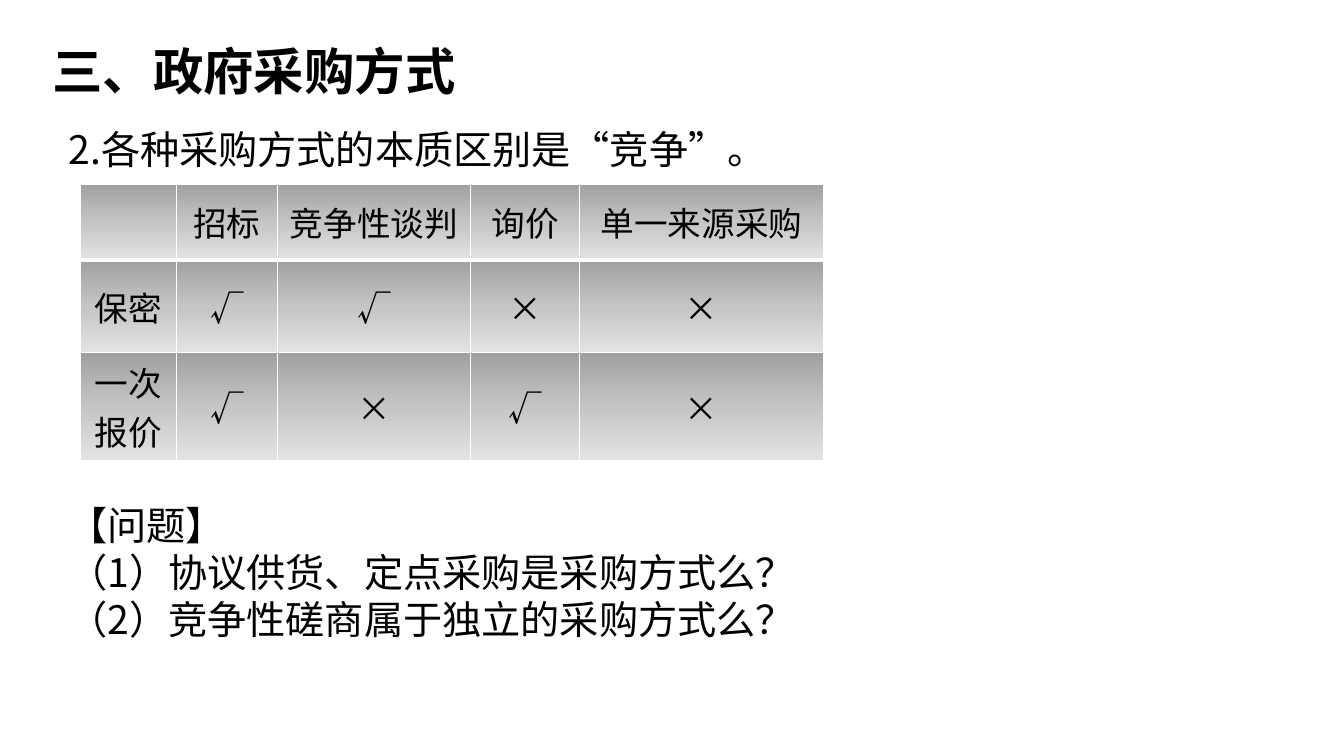
from dataclasses import dataclass

from lxml import etree
from pptx import Presentation
from pptx.dml.color import RGBColor
from pptx.enum import text
from pptx.oxml import ns, parse_xml
from pptx.util import Pt


@dataclass(frozen=True)
class Theme:
    font: str = "Noto Sans CJK SC"
    ink: str = "000000"
    border: str = "FFFFFF"
    gradient: tuple = ((0, "A0A0A0"), (50, "C5C5C5"), (100, "E3E3E3"))
    title: int = 36
    body: int = 28
    cell: int = 24
    body_line: float = 33.6


THEME = Theme()
COLUMN_WIDTHS = (68.4, 72, 138.2, 77.8, 174.2)
ROW_HEIGHTS = (54, 66.2, 77)
METHODS = (
    ("", "招标", "竞争性谈判", "询价", "单一来源采购"),
    ("保密", "√", "√", "×", "×"),
    ("一次\n报价", "√", "×", "√", "×"),
)
STATEMENT = "2.各种采购方式的本质区别是“竞争”。"
QUESTIONS = (
    "【问题】",
    "（1）协议供货、定点采购是采购方式么？",
    "（2）竞争性磋商属于独立的采购方式么？",
)


def format_para(para, size, align, bold=False):
    para.alignment = align
    for span in para.runs:
        span.font.size = Pt(size)
        span.font.bold = bold
        span.font.color.rgb = RGBColor.from_string(THEME.ink)
        span.font.name = THEME.font
        east_asian = etree.SubElement(span.font._element, ns.qn("a:ea"))
        east_asian.set("typeface", THEME.font)


def set_frame(frame):
    frame.word_wrap = True
    frame.auto_size = text.MSO_AUTO_SIZE.NONE
    frame.vertical_anchor = text.MSO_ANCHOR.TOP


def place_title(page, left, top, width, height):
    box = page.shapes.title
    box.left, box.top, box.width, box.height = map(Pt, (left, top, width, height))
    box.text_frame.text = "三、政府采购方式"
    set_frame(box.text_frame)
    para = box.text_frame.paragraphs[0]
    para.line_spacing = 0.9
    format_para(para, THEME.title, text.PP_ALIGN.JUSTIFY, bold=True)


def add_body(page, left, top, width, height, table_gap):
    """Add the statement and the questions, with room for the table between."""
    box = page.shapes.add_textbox(*map(Pt, (left, top, width, height)))
    frame = box.text_frame
    frame.text = "\n".join((STATEMENT, *QUESTIONS))
    set_frame(frame)
    frame.margin_top = Pt(5)
    for para in frame.paragraphs:
        para.line_spacing = Pt(THEME.body_line)
        para.space_before = Pt(0)
        format_para(para, THEME.body, text.PP_ALIGN.JUSTIFY)
    frame.paragraphs[1].space_before = Pt(table_gap)


def style_cell(cell, bottom_width):
    """Give the cell its white borders and grey vertical gradient."""
    props = cell._tc.get_or_add_tcPr()
    for side, width in (("L", 1), ("R", 1), ("T", 1), ("B", bottom_width)):
        props.append(parse_xml(
            f'<a:ln{side} {ns.nsdecls("a")} w="{Pt(width)}"><a:solidFill>'
            f'<a:srgbClr val="{THEME.border}"/></a:solidFill></a:ln{side}>'))
    stops = "".join(
        f'<a:gs pos="{share * 1000}"><a:srgbClr val="{color}"/></a:gs>'
        for share, color in THEME.gradient)
    props.append(parse_xml(
        f'<a:gradFill {ns.nsdecls("a")} rotWithShape="1"><a:gsLst>{stops}</a:gsLst>'
        '<a:lin ang="5400000" scaled="0"/></a:gradFill>'))


def add_method_table(page, left, top):
    size = sum(COLUMN_WIDTHS), sum(ROW_HEIGHTS)
    frame = page.shapes.add_table(
        len(ROW_HEIGHTS), len(COLUMN_WIDTHS), *map(Pt, (left, top, *size)))
    table = frame.table
    table.first_row = table.horz_banding = False
    for column, width in zip(table.columns, COLUMN_WIDTHS):
        column.width = Pt(width)
    for index, (row, height) in enumerate(zip(table.rows, ROW_HEIGHTS)):
        row.height = Pt(height)
        for cell, label in zip(row.cells, METHODS[index]):
            cell.text_frame.text = label
            cell.vertical_anchor = text.MSO_ANCHOR.MIDDLE
            for para in cell.text_frame.paragraphs:
                format_para(para, THEME.cell, text.PP_ALIGN.CENTER)
            style_cell(cell, bottom_width=3 if index == 0 else 1)


def main():
    deck = Presentation()
    deck.slide_width, deck.slide_height = Pt(960), Pt(540)
    page = deck.slides.add_slide(deck.slide_layouts[5])
    place_title(page, 30.2, 30.2, 605.5, 79.2)
    add_body(page, 41.8, 84.2, 570.2, 356.4, table_gap=7 * THEME.body_line)
    add_method_table(page, 57.6, 131.8)
    deck.save("out.pptx")


if __name__ == "__main__":
    main()
